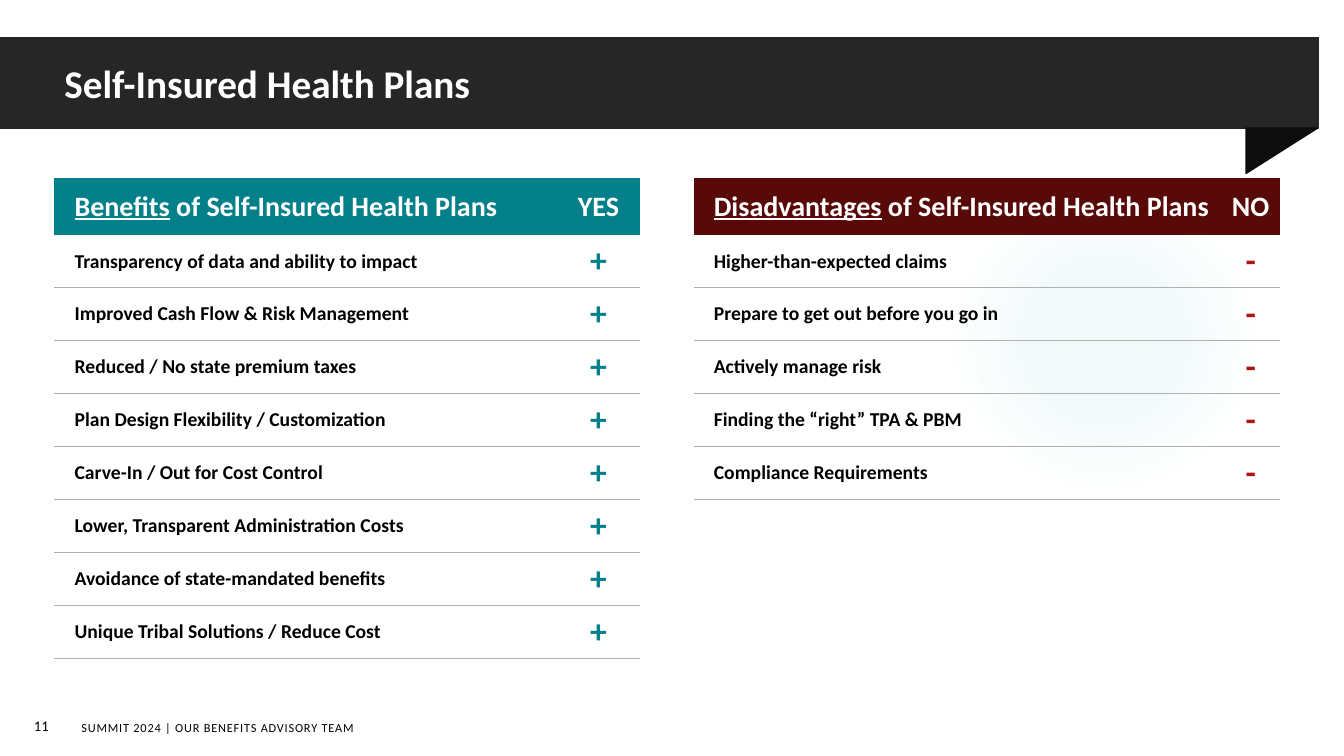
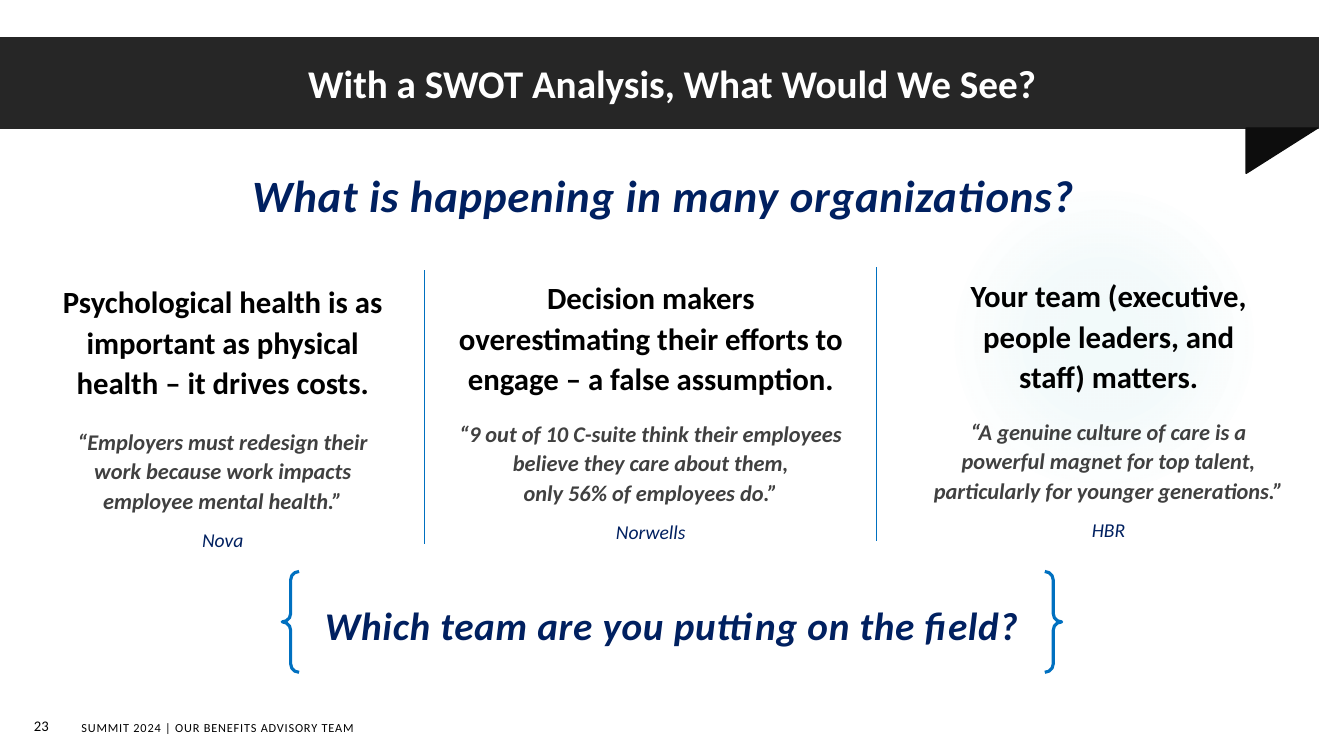
from itertools import zip_longest

from lxml import etree
from pptx import Presentation
from pptx.dml.color import RGBColor
from pptx.enum.shapes import MSO_CONNECTOR, MSO_SHAPE
from pptx.enum.text import MSO_ANCHOR, PP_ALIGN
from pptx.oxml.ns import qn
from pptx.util import Inches, Pt

CENTER = PP_ALIGN.CENTER
LEFT = PP_ALIGN.LEFT
MIDDLE = MSO_ANCHOR.MIDDLE
TOP = MSO_ANCHOR.TOP
STRAIGHT = MSO_CONNECTOR.STRAIGHT
OVAL = MSO_SHAPE.OVAL
RECTANGLE = MSO_SHAPE.RECTANGLE
RIGHT_TRIANGLE = MSO_SHAPE.RIGHT_TRIANGLE
DOUBLE_BRACE = MSO_SHAPE.DOUBLE_BRACE

FONT = "Calibri"
FOOTER = "SUMMIT 2024 | OUR BENEFITS ADVISORY TEAM"
PLAIN_TABLE_STYLE = "{2D5ABB26-0587-4C30-8999-92F81FD0307C}"
BLACK, WHITE, CHARCOAL, INK = "000000", "FFFFFF", "262626", "0D0D0D"
TEAL, MAROON, RED, GLOW = "03808A", "580A09", "B01513", "50B9C1"
NAVY, BLUE, GRAY, RULE = "002060", "0070C0", "404040", "B0B0B0"

TITLE = {"size": Pt(28), "bold": True, "color": WHITE}
FOOTER_TEXT = {"size": Pt(8.8), "color": BLACK, "spacing": 60}
PAGE_NUMBER = {"size": Pt(10.5), "color": BLACK}
TABLE_HEAD = {"size": Pt(20), "bold": True, "color": WHITE}
TABLE_ITEM = {"size": Pt(14), "bold": True, "color": BLACK}
TABLE_SIGN = {"size": Pt(24), "bold": True}
QUESTION = {"bold": True, "italic": True, "color": NAVY, "spacing": 50}
FINDING = {"size": Pt(22), "bold": True, "color": BLACK}
QUOTE = {"size": Pt(16), "bold": True, "italic": True, "color": GRAY}
QUOTE_SOURCE = {"size": Pt(14), "italic": True, "color": NAVY}
LOOSE = {"alignment": CENTER, "line_spacing": 1.1}

BENEFITS = [
    "Transparency of data and ability to impact",
    "Improved Cash Flow & Risk Management",
    "Reduced / No state premium taxes",
    "Plan Design Flexibility / Customization",
    "Carve-In / Out for Cost Control",
    "Lower, Transparent Administration Costs",
    "Avoidance of state-mandated benefits",
    "Unique Tribal Solutions / Reduce Cost",
]
DISADVANTAGES = [
    "Higher-than-expected claims",
    "Prepare to get out before you go in",
    "Actively manage risk",
    "Finding the “right” TPA & PBM",
    "Compliance Requirements",
]
FINDINGS = [
    ((0.51, 2.72, 3.4, 2.84), 12,
     "Psychological health is as important as physical health – it drives costs.",
     "“Employers must redesign their work because work impacts employee mental health.”",
     "Nova"),
    ((4.41, 2.68, 4.09, 2.87), 9,
     "Decision makers overestimating their efforts to engage – a false assumption.",
     "“9 out of 10 C-suite think their employees believe they care about them,\v"
     "only 56% of employees do.”",
     "Norwells"),
    ((9.12, 2.66, 3.75, 2.83), 9,
     "Your team (executive, people leaders, and\vstaff) matters.",
     "“A genuine culture of care is a powerful magnet for top talent, "
     "particularly for younger generations.”",
     "HBR"),
]


def rgb(value):
    """Return the colour for a hex string."""
    return RGBColor.from_string(value)


def lengths(values):
    """Turn a sequence of inches into lengths."""
    return [Inches(value) for value in values]


def format_font(font, style):
    """Apply a style dict to a font."""
    font.name = FONT
    for name, value in style.items():
        if name == "color":
            font.color.rgb = rgb(value)
        elif name == "spacing":
            font._element.set("spc", str(value))
        else:
            setattr(font, name, value)


def fill_paragraph(paragraph, runs, layout):
    """Write styled runs into a paragraph and set its layout."""
    for name, value in layout.items():
        setattr(paragraph, name, value)
    for text, style in runs:
        for index, line in enumerate(text.split("\v")):
            if index:
                paragraph.add_line_break()
            run = paragraph.add_run()
            run.text = line
            format_font(run.font, style)


def add_text(slide, box, paragraphs, anchor=TOP):
    """Add a wrapping text box of (text, style, layout) paragraphs."""
    frame = slide.shapes.add_textbox(*lengths(box)).text_frame
    frame.word_wrap = True
    frame.vertical_anchor = anchor
    for index, (text, style, layout) in enumerate(paragraphs):
        paragraph = frame.add_paragraph() if index else frame.paragraphs[0]
        fill_paragraph(paragraph, [(text, style)], layout)


def add_shape(slide, kind, box, fill=None, line=None, width=1):
    """Add a preset shape with an optional fill and outline."""
    shape = slide.shapes.add_shape(kind, *lengths(box))
    shape.shadow.inherit = False
    if fill:
        shape.fill.solid()
        shape.fill.fore_color.rgb = rgb(fill)
    else:
        shape.fill.background()
    if line:
        shape.line.color.rgb = rgb(line)
        shape.line.width = Pt(width)
    else:
        shape.line.fill.background()
    return shape


def add_glow(slide, box):
    """Add a soft disc that fades out from its centre."""
    properties = add_shape(slide, OVAL, box)._element.spPr
    gradient = etree.Element(qn("a:gradFill"), rotWithShape="1")
    stops = etree.SubElement(gradient, qn("a:gsLst"))
    for position, opacity in ((0, 7), (36, 6), (69, 0)):
        stop = etree.SubElement(stops, qn("a:gs"), pos=str(position * 1000))
        color = etree.SubElement(stop, qn("a:srgbClr"), val=GLOW)
        etree.SubElement(color, qn("a:alpha"), val=str(opacity * 1000))
    path = etree.SubElement(gradient, qn("a:path"), path="circle")
    etree.SubElement(path, qn("a:fillToRect"),
                     {side: "50000" for side in "ltrb"})
    properties.replace(properties.find(qn("a:noFill")), gradient)


def add_separator(slide, left, top, height):
    """Add a thin vertical line."""
    line = slide.shapes.add_connector(
        STRAIGHT, *lengths((left, top, left, top + height)))
    line.line.color.rgb = rgb(BLUE)
    line.line.width = Pt(0.75)
    etree.SubElement(line._element.spPr, qn("a:effectLst"))


def add_base_slide(presentation, title, number, title_left, alignment):
    """Add a slide with the shared glow, title band and footer."""
    slide = presentation.slides.add_slide(presentation.slide_layouts[6])
    add_glow(slide, (9.41, 1.83, 3.08, 3.08))
    add_shape(slide, RECTANGLE, (-0.01, 0.37, 13.09, 0.9), CHARCOAL, CHARCOAL)
    fold = add_shape(slide, RIGHT_TRIANGLE, (12.36, 1.27, 0.71, 0.45), INK, INK)
    fold._element.spPr.xfrm.set("flipV", "1")
    add_text(slide, (0.71, 7.09, 3.35, 0.25), [(FOOTER, FOOTER_TEXT, {})], MIDDLE)
    add_text(slide, (0.17, 7.07, 0.48, 0.26),
             [(number, PAGE_NUMBER, {"alignment": CENTER})], MIDDLE)
    add_text(slide, (title_left, 0.54, 9.65, 0.65),
             [(title, TITLE, {"alignment": alignment})])
    return slide


def set_borders(cell, sides):
    """Draw thin rules on the given sides of a cell and none on the others."""
    properties = cell._tc.get_or_add_tcPr()
    for index, side in enumerate(("lnL", "lnR", "lnT", "lnB")):
        line = etree.Element(qn("a:" + side), w="6350")
        if side in sides:
            fill = etree.SubElement(line, qn("a:solidFill"))
            etree.SubElement(fill, qn("a:srgbClr"), val=RULE)
        else:
            etree.SubElement(line, qn("a:noFill"))
        properties.insert(index, line)


def fill_cell(cell, runs, alignment=LEFT, inset=0.05, fill=None, sides=()):
    """Set the text, margins, fill and borders of a cell."""
    cell.vertical_anchor = MIDDLE
    margins = {"margin_left": inset, "margin_right": 0.05,
               "margin_top": 0.05, "margin_bottom": 0.05}
    for name, value in margins.items():
        setattr(cell, name, Inches(value))
    if fill:
        cell.fill.solid()
        cell.fill.fore_color.rgb = rgb(fill)
    else:
        cell.fill.background()
    set_borders(cell, sides)
    fill_paragraph(cell.text_frame.paragraphs[0], runs, {"alignment": alignment})


def fill_list(table, column, word, answer, items, sign, fill, sign_color):
    """Fill the two columns of one list: its header and its signed items."""
    head = [(word, {**TABLE_HEAD, "underline": True}),
            (" of Self-Insured Health Plans", TABLE_HEAD)]
    fill_cell(table.cell(0, column), head, LEFT, 0.2, fill)
    fill_cell(table.cell(0, column + 1), [(answer, TABLE_HEAD)], CENTER, fill=fill)
    sign_style = {**TABLE_SIGN, "color": sign_color}
    rows = range(1, len(table.rows))
    for row, item in zip_longest(rows, items):
        sides = ("lnB",) if row == 1 else ("lnT", "lnB")
        if item is None:
            sides = ("lnT",) if row == len(items) + 1 else ()
        text = [(item, TABLE_ITEM)] if item else []
        mark = [(sign, sign_style)] if item else []
        fill_cell(table.cell(row, column), text, LEFT, 0.2, sides=sides)
        fill_cell(table.cell(row, column + 1), mark, CENTER, sides=sides)


def add_comparison(slide, box):
    """Add the table that sets benefits beside disadvantages."""
    frame = slide.shapes.add_table(len(BENEFITS) + 1, 5, *lengths(box))
    table = frame.table
    table._tbl.tblPr.find(qn("a:tableStyleId")).text = PLAIN_TABLE_STYLE
    table.first_row = table.horz_banding = False
    for column, width in zip(table.columns, (4.98, 0.83, 0.53, 5.23, 0.59)):
        column.width = Inches(width)
    for index, row in enumerate(table.rows):
        row.height = Inches(0.525 if index else 0.56)
        fill_cell(table.cell(index, 2), [])
    fill_list(table, 0, "Benefits", "YES", BENEFITS, "+", TEAL, TEAL)
    fill_list(table, 3, "Disadvantages", "NO", DISADVANTAGES, "-", MAROON, RED)


def add_finding(slide, box, gap, finding, quote, source):
    """Add one column: a finding, a quote and its source."""
    before = {**LOOSE, "space_before": Pt(5.3)}
    add_text(slide, box, [
        (finding, FINDING, {**LOOSE, "space_after": Pt(gap)}),
        (quote, QUOTE, {**before, "space_after": Pt(3)}),
        (source, QUOTE_SOURCE, before),
    ])


def add_closing_question(slide, box):
    """Add the closing question inside a pair of braces."""
    left, top, width, height = box
    add_text(slide, (left + 0.15, top + 0.2, width - 0.3, height - 0.4),
             [("Which team are you putting on the field?",
               {**QUESTION, "size": Pt(28)}, LOOSE)])
    add_shape(slide, DOUBLE_BRACE, box, line=BLUE, width=2.25)


def build_plans_slide(presentation):
    """Build the slide on self-insured health plans."""
    slide = add_base_slide(
        presentation, "Self-Insured Health Plans", "11", 0.54, LEFT)
    add_comparison(slide, (0.54, 1.77, 12.16, 4.76))


def build_swot_slide(presentation):
    """Build the slide on what a SWOT analysis would show."""
    slide = add_base_slide(
        presentation, "With a SWOT Analysis, What Would We See?", "23", 1.84, CENTER)
    add_text(slide, (2.17, 1.56, 8.82, 0.65),
             [("What is happening in many organizations?",
               {**QUESTION, "size": Pt(32)}, LOOSE)])
    for left, top in ((4.21, 2.68), (8.69, 2.65)):
        add_separator(slide, left, top, 2.72)
    add_closing_question(slide, (2.8, 5.67, 7.73, 1))
    for finding in FINDINGS:
        add_finding(slide, *finding)


def main():
    """Build and save the presentation."""
    presentation = Presentation()
    presentation.slide_width = Inches(13.33)
    presentation.slide_height = Inches(7.5)
    build_plans_slide(presentation)
    build_swot_slide(presentation)
    presentation.save("out.pptx")


if __name__ == "__main__":
    main()
